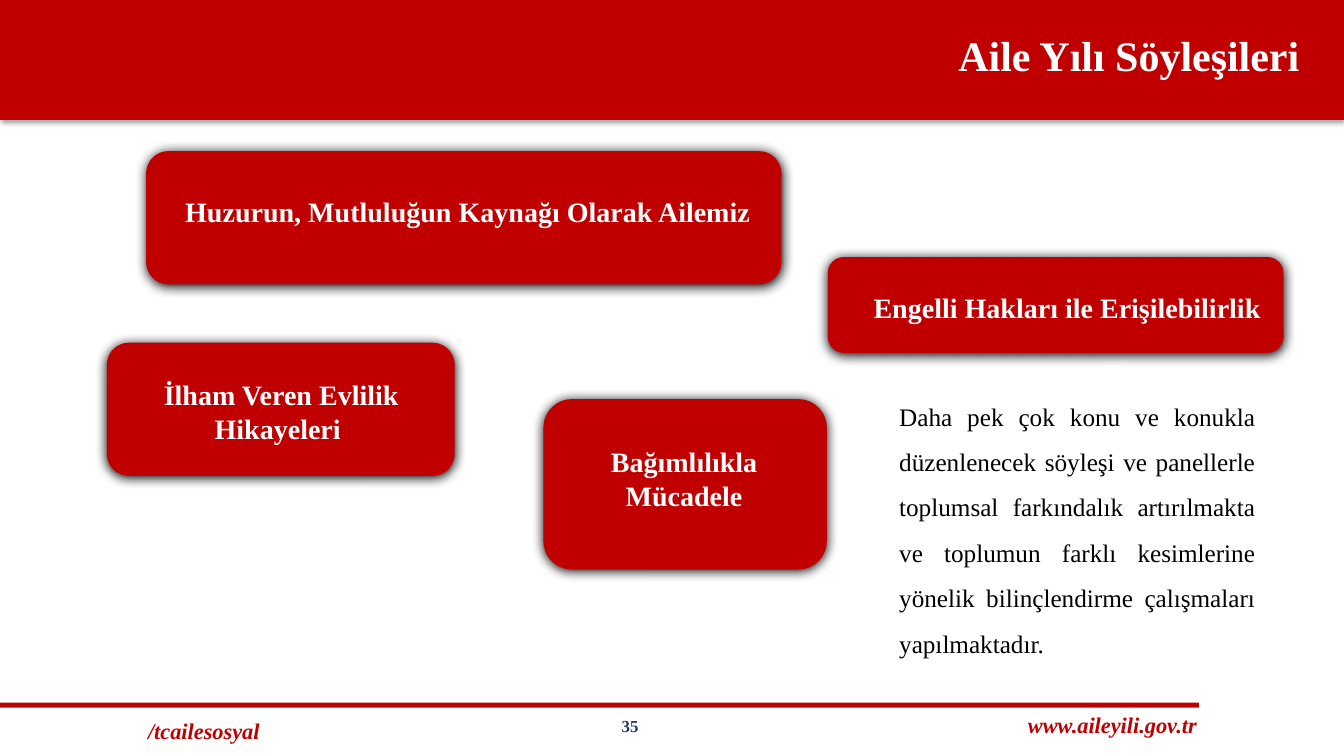
"""Build the slide on family year talks."""
import pptx
import pptx.util
import pptx.dml.color
import pptx.enum.shapes
import pptx.enum.text
from dataclasses import dataclass
from lxml import etree

Inches = pptx.util.Inches
Align = pptx.enum.text.PP_ALIGN
Kind = pptx.enum.shapes.MSO_SHAPE


@dataclass(frozen=True)
class Theme:
    font: str = "Times New Roman"
    red: str = "C00000"
    white: str = "FFFFFF"
    black: str = "000000"
    navy: str = "203864"
    title: int = 30
    card: int = 20
    body: int = 18
    foot: int = 16
    page: int = 12


theme = Theme()


def add_text(parent, text, at, size, color, align=Align.LEFT, bold=True, italic=False, space=1.0):
    box = parent.add_textbox(*map(Inches, at))
    frame = box.text_frame
    frame.word_wrap = True
    para = frame.paragraphs[0]
    para.alignment = align
    para.line_spacing = space
    run = para.add_run()
    run.text = text
    run.font.name = theme.font
    run.font.size = pptx.util.Pt(size)
    run.font.bold = bold
    run.font.italic = italic
    run.font.color.rgb = pptx.dml.color.RGBColor.from_string(color)


def add_block(parent, kind, at, shade=None):
    block = parent.add_shape(kind, *map(Inches, at))
    block.fill.solid()
    block.fill.fore_color.rgb = pptx.dml.color.RGBColor.from_string(theme.red)
    block.line.fill.background()
    block.shadow.inherit = False
    if shade:
        alpha, blur, dist = shade
        ns = "{http://schemas.openxmlformats.org/drawingml/2006/main}"
        effect = block.element.spPr.find(ns + "effectLst")
        outer = etree.SubElement(effect, ns + "outerShdw", blurRad=str(pptx.util.Pt(blur)),
                                 dist=str(pptx.util.Pt(dist)), dir="5400000",
                                 algn="t", rotWithShape="0")
        tint = etree.SubElement(outer, ns + "srgbClr", val=theme.black)
        etree.SubElement(tint, ns + "alpha", val=str(alpha * 1000))


deck = pptx.Presentation()
deck.slide_width = Inches(13.33)
deck.slide_height = Inches(7.5)
slide = deck.slides.add_slide(deck.slide_layouts[6])
shapes = slide.shapes

add_block(shapes, Kind.RECTANGLE, (0, 0, 13.33, 1.19), shade=(32, 3.5, 2.2))
add_block(shapes, Kind.RECTANGLE, (0, 6.97, 11.89, 0.05))
add_text(shapes, "/tcailesosyal", (1.37, 7.07, 1.44, 0.37), theme.foot, theme.red, italic=True)
add_text(shapes, "www.aileyili.gov.tr", (9.68, 7.01, 2.29, 0.37), theme.foot, theme.red,
         align=Align.RIGHT, italic=True)
add_text(shapes, "Aile Yılı Söyleşileri", (5.39, 0.3, 7.6, 0.68), theme.title, theme.white,
         align=Align.RIGHT, space=0.9)
add_text(shapes, "35", (4.75, 7.05, 3, 0.4), theme.page, theme.navy, align=Align.CENTER)
add_text(shapes, "Daha pek çok konu ve konukla düzenlenecek söyleşi ve panellerle toplumsal "
         "farkındalık artırılmakta ve toplumun farklı kesimlerine yönelik bilinçlendirme "
         "çalışmaları yapılmaktadır.", (8.82, 3.78, 3.73, 3.23), theme.body, theme.black,
         align=Align.JUSTIFY, bold=False, space=1.5)

cards = [
    ("İlham Veren Evlilik Hikayeleri ", (1.06, 3.4, 3.45, 1.32), (1.21, 3.7, 3.16, 0.77)),
    ("Huzurun, Mutluluğun Kaynağı Olarak Ailemiz ", (1.45, 1.5, 6.3, 1.32),
     (1.72, 1.88, 5.91, 0.44)),
    ("Bağımlılıkla Mücadele", (5.39, 3.96, 2.81, 1.69), (5.71, 4.36, 2.15, 0.99)),
    ("Engelli Hakları ile Erişilebilirlik ", (8.21, 2.55, 4.52, 0.95),
     (8.35, 2.83, 4.54, 0.32)),
]
for label, frame, inner in cards:
    group = shapes.add_group_shape().shapes
    add_block(group, Kind.ROUNDED_RECTANGLE, frame, shade=(100, 8.5, 1))
    add_text(group, label, inner, theme.card, theme.white, align=Align.CENTER)

deck.save("out.pptx")
